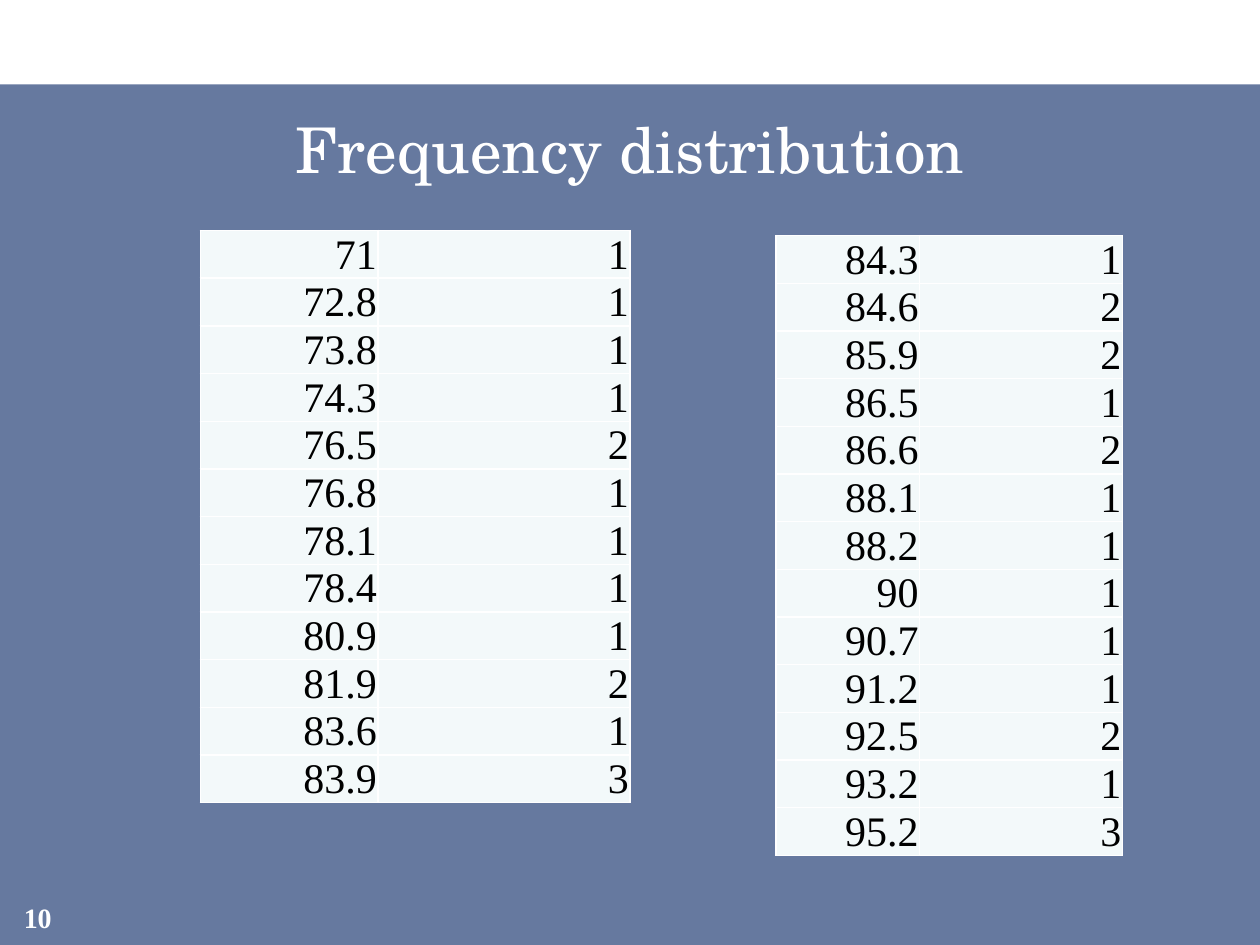
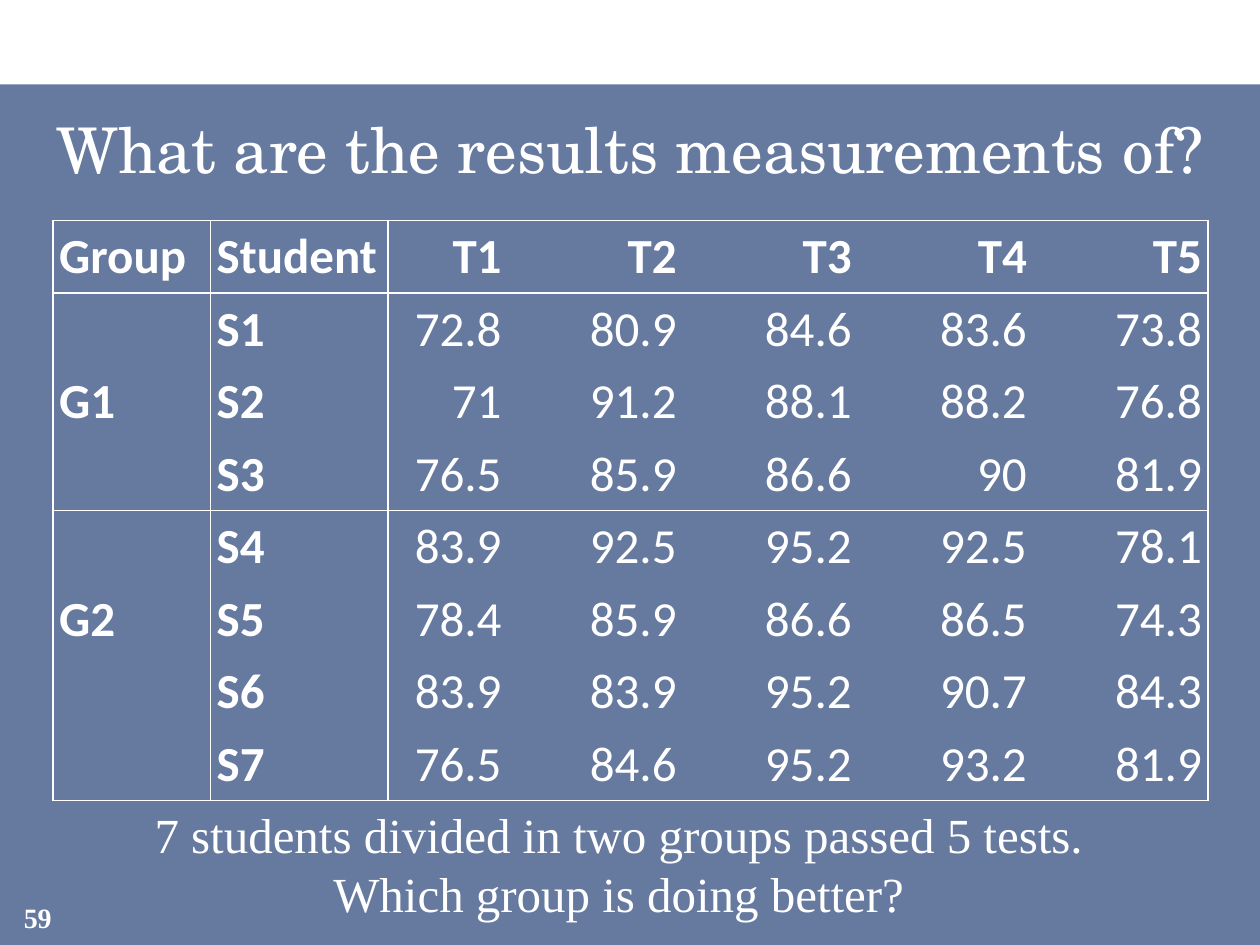
from lxml import etree
from pptx import Presentation
from pptx.dml.color import RGBColor
from pptx.enum import shapes, text
from pptx.oxml.ns import qn
from pptx.util import Inches, Pt

# Content
FREQUENCY_TITLE = "Frequency distribution"
LOW_SCORES = [
    ("71", "1"), ("72.8", "1"), ("73.8", "1"), ("74.3", "1"),
    ("76.5", "2"), ("76.8", "1"), ("78.1", "1"), ("78.4", "1"),
    ("80.9", "1"), ("81.9", "2"), ("83.6", "1"), ("83.9", "3"),
]
HIGH_SCORES = [
    ("84.3", "1"), ("84.6", "2"), ("85.9", "2"), ("86.5", "1"),
    ("86.6", "2"), ("88.1", "1"), ("88.2", "1"), ("90", "1"),
    ("90.7", "1"), ("91.2", "1"), ("92.5", "2"), ("93.2", "1"),
    ("95.2", "3"),
]
RESULTS_TITLE = "What are the results measurements of?"
RESULTS = [
    ("Group", "Student", "T1", "T2", "T3", "T4", "T5"),
    ("", "S1", "72.8", "80.9", "84.6", "83.6", "73.8"),
    ("G1", "S2", "71", "91.2", "88.1", "88.2", "76.8"),
    ("", "S3", "76.5", "85.9", "86.6", "90", "81.9"),
    ("", "S4", "83.9", "92.5", "95.2", "92.5", "78.1"),
    ("G2", "S5", "78.4", "85.9", "86.6", "86.5", "74.3"),
    ("", "S6", "83.9", "83.9", "95.2", "90.7", "84.3"),
    ("", "S7", "76.5", "84.6", "95.2", "93.2", "81.9"),
]
QUESTION = ["7 students divided in two groups passed 5 tests.",
            "Which group is doing better?"]

# Shared style
WHITE, BLACK, NAVY, PALE = "FFFFFF", "000000", "002060", "F3F9FA"
TITLE_FONT, BODY_FONT, GRID_FONT = "TeX Gyre Schola", "Times New Roman", "Calibri"
LEFT, CENTER, RIGHT = text.PP_ALIGN.LEFT, text.PP_ALIGN.CENTER, text.PP_ALIGN.RIGHT
SIDES = "LRTB"


def color(hex_value):
    return RGBColor.from_string(hex_value)


def write(paragraph, words, font, size, ink=WHITE, bold=False, align=CENTER,
          pitch=None):
    paragraph.alignment = align
    if pitch:
        paragraph.line_spacing = Pt(pitch)
    run = paragraph.add_run()
    run.text = words
    run.font.name, run.font.size, run.font.bold = font, Pt(size), bold
    run.font.color.rgb = color(ink)


def new_slide(deck, heading, number):
    """Add a slide with the band, the title and the page number."""
    slide = deck.slides.add_slide(deck.slide_layouts[5])

    # Translucent band, behind everything else
    band = slide.shapes.add_shape(shapes.MSO_SHAPE.RECTANGLE, 0, Inches(0.67),
                                  Inches(10), Inches(6.83))
    band.shadow.inherit = False
    band.line.fill.background()
    band.fill.solid()
    band.fill.fore_color.rgb = color(NAVY)
    navy = band._element.spPr.find(".//" + qn("a:srgbClr"))
    etree.SubElement(navy, qn("a:alpha"), val="60000")
    slide.shapes._spTree.insert(2, band._element)

    # Title
    title = slide.shapes.title
    title.left, title.top = Inches(0.25), Inches(0.83)
    title.width, title.height = Inches(9.5), Inches(0.83)
    title.text_frame.auto_size = text.MSO_AUTO_SIZE.NONE
    title.text_frame.vertical_anchor = text.MSO_ANCHOR.TOP
    write(title.text_frame.paragraphs[0], heading, TITLE_FONT, 36)

    # Page number
    page = slide.shapes.add_textbox(0, Inches(7.1), Inches(0.6), Inches(0.4))
    page.text_frame.word_wrap = True
    write(page.text_frame.paragraphs[0], number, BODY_FONT, 16, bold=True)
    return slide


def set_borders(cell, ruled_sides):
    properties = cell._tc.get_or_add_tcPr()
    for place, side in enumerate(SIDES):
        line = etree.Element(qn("a:ln" + side), w=str(Pt(1)))
        if side in ruled_sides:
            fill = etree.SubElement(line, qn("a:solidFill"))
            etree.SubElement(fill, qn("a:srgbClr"), val=WHITE)
        else:
            etree.SubElement(line, qn("a:noFill"))
        properties.insert(place, line)


def add_grid(slide, rows, left, top, widths, row_height, inset, style):
    """Add a table; style(row, column) gives fill, borders and text format.

    Rows grow from row_height to the line pitch of their text.
    """
    table = slide.shapes.add_table(
        len(rows), len(widths), Inches(left), Inches(top),
        Inches(sum(widths)), Inches(row_height * len(rows))).table
    table.first_row = table.horz_banding = False
    for column, width in zip(table.columns, widths):
        column.width = Inches(width)
    for r, values in enumerate(rows):
        table.rows[r].height = Inches(row_height)
        for c, value in enumerate(values):
            fill, ruled_sides, text_format = style(r, c)
            cell = table.cell(r, c)
            cell.margin_left = cell.margin_right = cell.margin_top = Inches(inset)
            cell.margin_bottom = Inches(inset if inset > 0.01 else 0)
            cell.vertical_anchor = text.MSO_ANCHOR.BOTTOM
            if fill:
                cell.fill.solid()
                cell.fill.fore_color.rgb = color(fill)
            else:
                cell.fill.background()
            set_borders(cell, ruled_sides)
            if value:
                write(cell.text_frame.paragraphs[0], value, **text_format)


def frequency_style(row, column):
    return PALE, SIDES, dict(font=BODY_FONT, size=24, ink=BLACK, align=RIGHT,
                             pitch=26.5)


def results_style(row, column):
    # Rules frame the header, each group and the two label columns
    ruled = {"L": column <= 2, "R": column in (0, 1, 6),
             "T": row in (0, 1, 4), "B": row in (0, 3, 7)}
    sides = [side for side in SIDES if ruled[side]]
    label = column < 2
    return None, sides, dict(font=GRID_FONT, size=28, bold=label or row == 0,
                             align=LEFT if label else RIGHT, pitch=34.2)


def main():
    deck = Presentation()
    deck.slide_width, deck.slide_height = Inches(10), Inches(7.5)

    # Frequency distribution
    frequency = new_slide(deck, FREQUENCY_TITLE, "10")
    for scores, left, top, widths in [
            (LOW_SCORES, 1.59, 1.83, (1.41, 2)),
            (HIGH_SCORES, 6.16, 1.87, (1.14, 1.61))]:
        add_grid(frequency, scores, left, top, widths, 0.19, 0.01, frequency_style)

    # Test results by group
    results = new_slide(deck, RESULTS_TITLE, "59")
    add_grid(results, RESULTS, 0.42, 1.75, [1.25, 1.41, 0.95] + [1.39] * 4,
             0.42, 0.05, results_style)

    # Closing question
    question = results.shapes.add_textbox(Inches(1.04), Inches(6.33),
                                          Inches(7.74), Inches(1.04)).text_frame
    question.word_wrap = True
    for i, sentence in enumerate(QUESTION):
        paragraph = question.add_paragraph() if i else question.paragraphs[0]
        write(paragraph, sentence, BODY_FONT, 28, pitch=34)

    deck.save("out.pptx")


if __name__ == "__main__":
    main()
